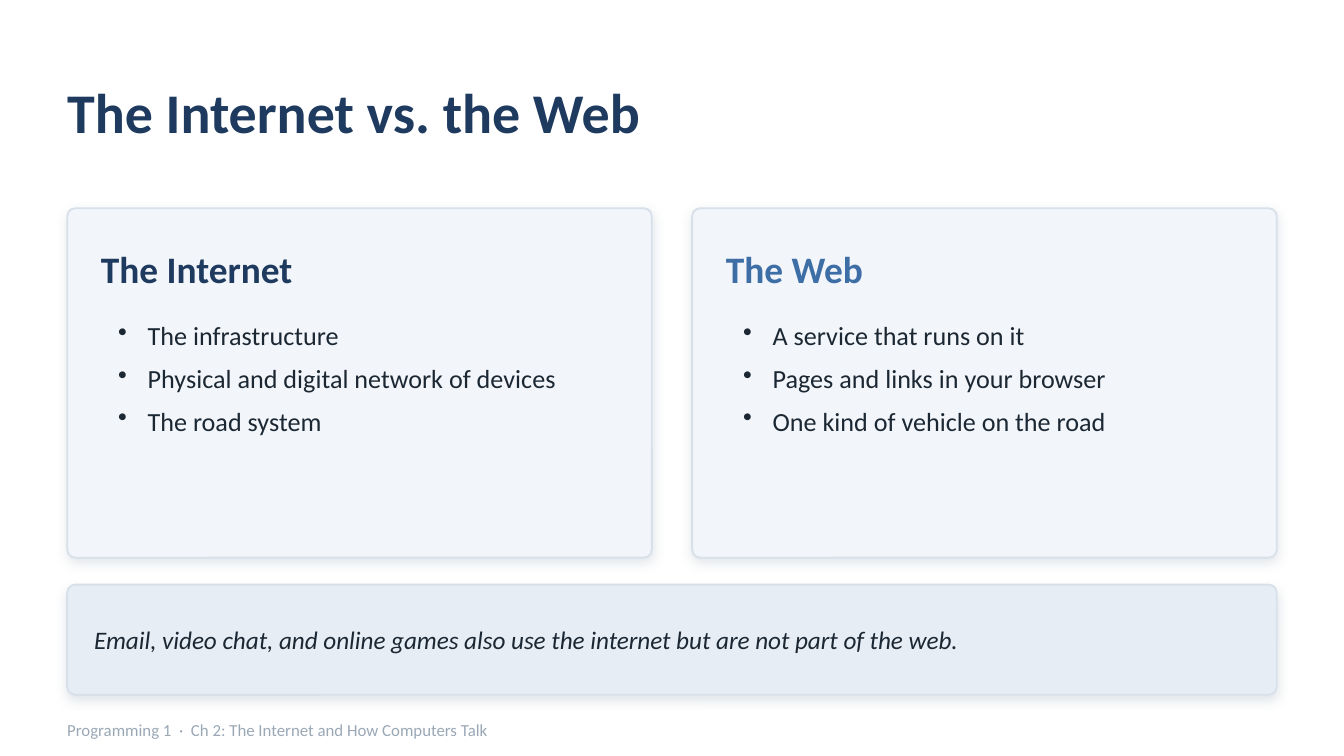
from dataclasses import dataclass
from typing import NamedTuple

from lxml.etree import SubElement
from pptx import Presentation
from pptx.dml.color import RGBColor
from pptx.enum.shapes import MSO_SHAPE
from pptx.enum.text import MSO_ANCHOR
from pptx.oxml.ns import qn
from pptx.slide import Slide
from pptx.text.text import TextFrame
from pptx.util import Inches, Pt

CELL = 0.05  # grid pitch in inches: 200 columns across the slide
COLUMNS, ROWS = 200, 112.5
MARGIN = 10
GUTTER = 6
CONTENT_COLUMNS = COLUMNS - 2 * MARGIN
CARD_COLUMNS = (CONTENT_COLUMNS - GUTTER) / 2
CORNER = 1.2  # corner radius of panels, in cells


@dataclass(frozen=True)
class Theme:
    font: str = "Calibri"
    navy: str = "1F3A5F"
    blue: str = "3D6EA5"
    ink: str = "1B2733"
    muted: str = "9AA8B6"
    card: str = "F2F5F9"
    callout: str = "E7EDF4"
    border: str = "D8E0E9"
    title_size: float = 30
    heading_size: float = 20
    bullet_size: float = 14
    callout_size: float = 13.5
    footer_size: float = 9


THEME = Theme()


class Area(NamedTuple):
    """A block of grid cells."""
    column: float
    row: float
    columns: float
    rows: float

    def lengths(self) -> list[Inches]:
        return [Inches(cells * CELL) for cells in self]


class Style(NamedTuple):
    size: float
    color: str
    bold: bool = False
    italic: bool = False


class Card(NamedTuple):
    heading: str
    color: str
    bullets: tuple[str, ...]


CARDS = (
    Card("The Internet", THEME.navy, (
        "The infrastructure",
        "Physical and digital network of devices",
        "The road system",
    )),
    Card("The Web", THEME.blue, (
        "A service that runs on it",
        "Pages and links in your browser",
        "One kind of vehicle on the road",
    )),
)


def add_frame(slide: Slide, area: Area) -> TextFrame:
    frame = slide.shapes.add_textbox(*area.lengths()).text_frame
    frame.word_wrap = True
    return frame


def add_run(paragraph, text: str, style: Style) -> None:
    run = paragraph.add_run()
    run.text = text
    run.font.name = THEME.font
    run.font.size = Pt(style.size)
    run.font.bold = style.bold
    run.font.italic = style.italic
    run.font.color.rgb = RGBColor.from_string(style.color)


def add_line(slide: Slide, area: Area, text: str, style: Style) -> None:
    """One vertically centred line without insets."""
    frame = add_frame(slide, area)
    frame.vertical_anchor = MSO_ANCHOR.MIDDLE
    frame.margin_left = frame.margin_right = 0
    frame.margin_top = frame.margin_bottom = 0
    add_run(frame.paragraphs[0], text, style)


def add_bullets(slide: Slide, area: Area, items: tuple[str, ...]) -> None:
    frame = add_frame(slide, area)
    for index, item in enumerate(items):
        paragraph = frame.add_paragraph() if index else frame.paragraphs[0]
        paragraph.space_after = Pt(6)
        properties = paragraph._p.get_or_add_pPr()
        properties.set("marL", str(Inches(0.22)))
        properties.set("indent", str(-Inches(0.22)))
        SubElement(properties, qn("a:buChar"), char="•")
        add_run(paragraph, item, Style(THEME.bullet_size, THEME.ink))


def add_panel(slide: Slide, area: Area, fill: str) -> None:
    """Rounded panel with a thin border and a soft shadow below it."""
    panel = slide.shapes.add_shape(MSO_SHAPE.ROUNDED_RECTANGLE, *area.lengths())
    panel.adjustments[0] = CORNER / area.rows
    panel.fill.solid()
    panel.fill.fore_color.rgb = RGBColor.from_string(fill)
    panel.line.color.rgb = RGBColor.from_string(THEME.border)
    panel.line.width = Pt(1)
    panel.shadow.inherit = False
    effects = panel._element.spPr.find(qn("a:effectLst"))
    shadow = SubElement(effects, qn("a:outerShdw"), blurRad=str(Pt(6)),
                        dist=str(Pt(2)), dir=str(90 * 60000),
                        algn="bl", rotWithShape="0")
    color = SubElement(shadow, qn("a:srgbClr"), val=THEME.muted)
    SubElement(color, qn("a:alpha"), val="28000")


def add_card(slide: Slide, area: Area, card: Card) -> None:
    add_panel(slide, area, THEME.card)
    inner = area.columns - 10
    add_line(slide, Area(area.column + 5, area.row + 4, inner, 10),
             card.heading, Style(THEME.heading_size, card.color, bold=True))
    add_bullets(slide, Area(area.column + 5.6, area.row + 15.6, inner, 32),
                card.bullets)


def main() -> None:
    deck = Presentation()
    deck.slide_width = Inches(COLUMNS * CELL)
    deck.slide_height = Inches(ROWS * CELL)
    slide = deck.slides.add_slide(deck.slide_layouts[6])

    # Title
    add_line(slide, Area(MARGIN, 8, CONTENT_COLUMNS, 17),
             "The Internet vs. the Web",
             Style(THEME.title_size, THEME.navy, bold=True))

    # Comparison cards
    for index, card in enumerate(CARDS):
        left = MARGIN + index * (CARD_COLUMNS + GUTTER)
        add_card(slide, Area(left, 31, CARD_COLUMNS, 52), card)

    # Callout
    add_panel(slide, Area(MARGIN, 87, CONTENT_COLUMNS, 16.4), THEME.callout)
    add_line(slide, Area(MARGIN + 4, 88, CONTENT_COLUMNS - 8, 14.4),
             "Email, video chat, and online games also use the internet "
             "but are not part of the web.",
             Style(THEME.callout_size, THEME.ink, italic=True))

    # Footer
    add_line(slide, Area(MARGIN, 106, 160, 5.2),
             "Programming 1  ·  Ch 2: The Internet and How Computers Talk",
             Style(THEME.footer_size, THEME.muted))

    deck.save("out.pptx")


if __name__ == "__main__":
    main()
